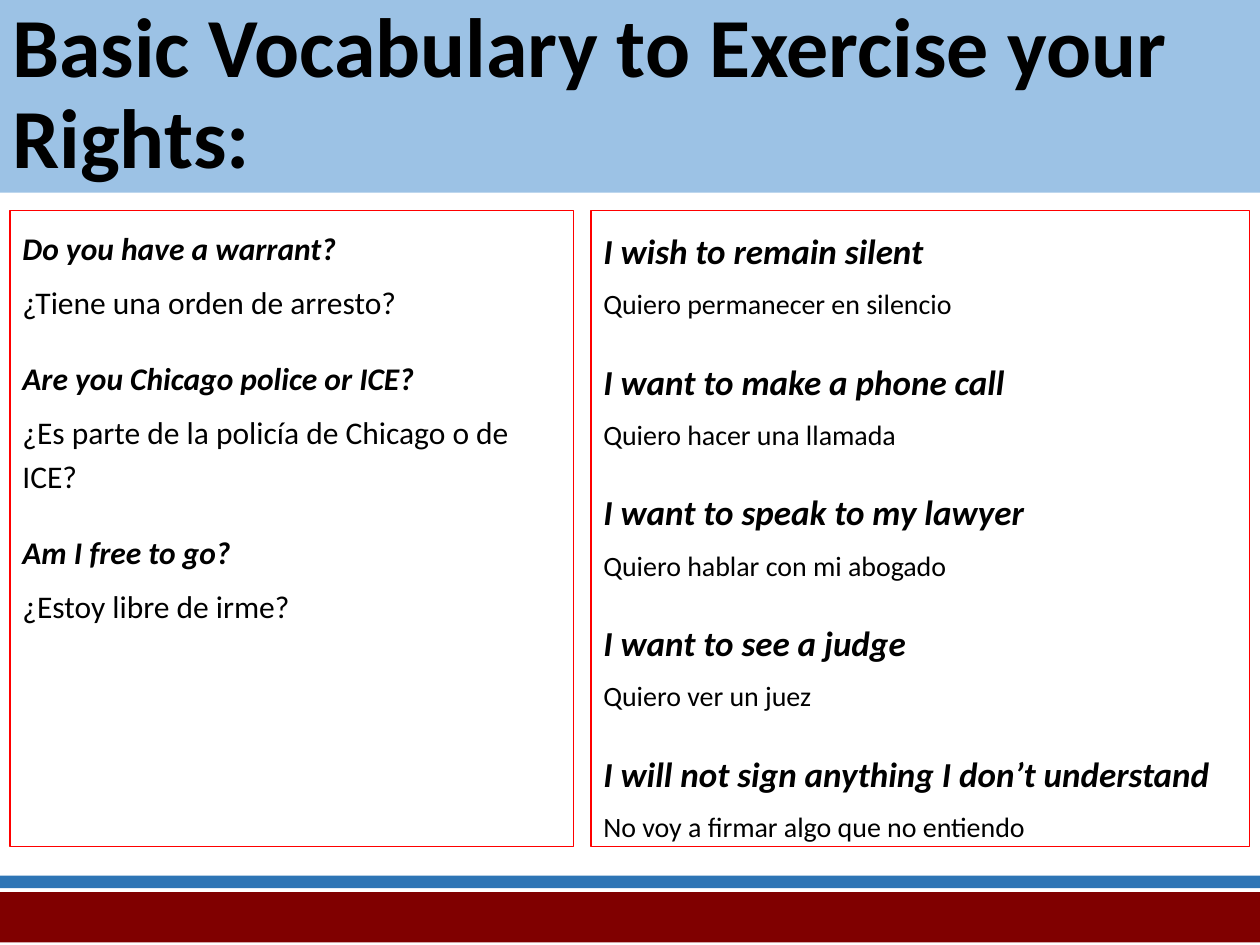
from pptx import Presentation
from pptx.dml.color import RGBColor
from pptx.enum.shapes import MSO_SHAPE
from pptx.enum.text import MSO_ANCHOR, PP_ALIGN
from pptx.util import Inches, Pt

RECT = MSO_SHAPE.RECTANGLE
TOP, BOTTOM = MSO_ANCHOR.TOP, MSO_ANCHOR.BOTTOM
LEFT = PP_ALIGN.LEFT
FONT = "Calibri"
COLORS = {
    "text": "000000",
    "banner": "9CC2E5",
    "stripe": "2E75B5",
    "base": "800000",
    "border": "FF0000",
}
ASK = [
    ("Do you have a warrant?", "¿Tiene una orden de arresto?"),
    ("Are you Chicago police or ICE?",
     "¿Es parte de la policía de Chicago o de ICE?"),
    ("Am I free to go?", "¿Estoy libre de irme?"),
]
SAY = [
    ("I wish to remain silent", "Quiero permanecer en silencio"),
    ("I want to make a phone call", "Quiero hacer una llamada"),
    ("I want to speak to my lawyer", "Quiero hablar con mi abogado"),
    ("I want to see a judge", "Quiero ver un juez"),
    ("I will not sign anything I don’t understand",
     "No voy a firmar algo que no entiendo"),
]


def color(name):
    return RGBColor.from_string(COLORS[name])


def add_rect(slide, x, y, w, h, fill=None, line=None):
    rect = slide.shapes.add_shape(RECT, x, y, w, h)
    rect.shadow.inherit = False
    if fill:
        rect.fill.solid()
        rect.fill.fore_color.rgb = color(fill)
    else:
        rect.fill.background()
    if line:
        rect.line.color.rgb = color(line)
        rect.line.width = Pt(0.75)
    else:
        rect.line.fill.background()
    return rect


def style(para, size, bold, italic=False):
    para.alignment = LEFT
    for run in para.runs:
        font = run.font
        font.name = FONT
        font.size = Pt(size)
        font.bold = bold
        font.italic = italic
        font.color.rgb = color("text")


def add_title(slide, x, y, w, h, text):
    add_rect(slide, x, y, w, h, "banner")
    box = slide.shapes.add_textbox(x, y, w - Inches(0.08), h)
    frame = box.text_frame
    frame.word_wrap = True
    frame.vertical_anchor = BOTTOM
    frame.text = text
    para = frame.paragraphs[0]
    para.line_spacing = 0.9
    style(para, 48, True)


def add_panel(slide, x, y, w, h, pairs, sizes):
    frame = add_rect(slide, x, y, w, h, line="border").text_frame
    frame.word_wrap = True
    frame.vertical_anchor = TOP
    frame.margin_left = frame.margin_right = Inches(0.1)
    frame.margin_top = frame.margin_bottom = Inches(0.1)
    lines = [text for pair in pairs for text in pair]
    frame.text = "\n".join(lines)
    for i, para in enumerate(frame.paragraphs):
        phrase = i % 2 == 0
        para.line_spacing = 1.15
        para.space_before = Pt(19 if phrase and i else 6)
        style(para, sizes[i % 2], phrase, phrase)


def add_footer(slide, x, y, w):
    add_rect(slide, x, y + Inches(0.13), w, Inches(0.4), "base")
    add_rect(slide, x, y, w, Inches(0.1), "stripe")


def main():
    deck = Presentation()
    deck.slide_width, deck.slide_height = Inches(10), Inches(7.5)
    slide = deck.slides.add_slide(deck.slide_layouts[6])
    wide = deck.slide_width
    add_footer(slide, 0, Inches(6.95), wide)
    add_title(slide, 0, 0, wide, Inches(1.53),
              "Basic Vocabulary to Exercise your Rights:")
    top, high = Inches(1.67), Inches(5.05)
    add_panel(slide, Inches(0.08), top, Inches(4.47), high, ASK, (18, 18))
    add_panel(slide, Inches(4.69), top, Inches(5.23), high, SAY, (20, 16))
    deck.save("out.pptx")


if __name__ == "__main__":
    main()
